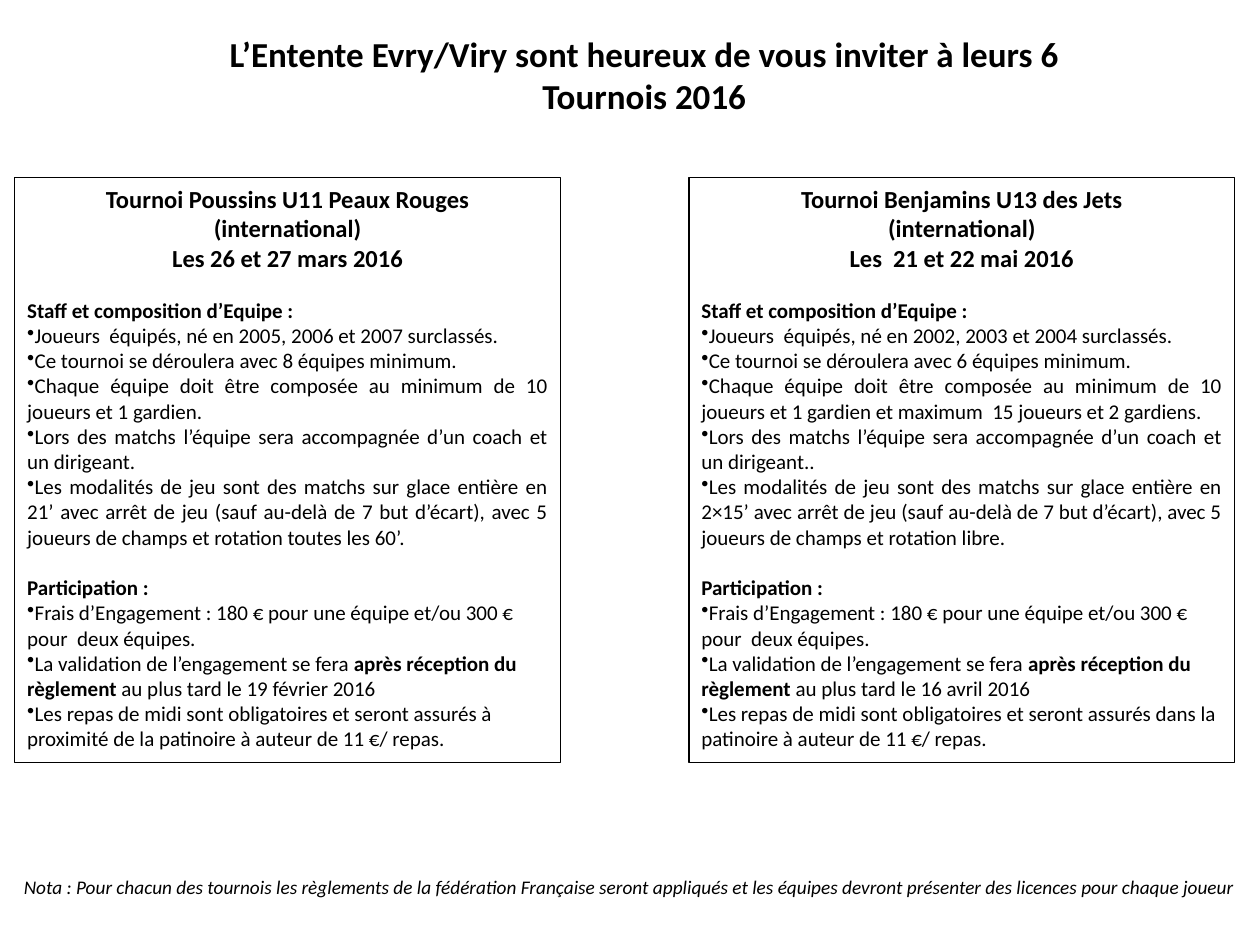
from lxml.etree import SubElement
from pptx import Presentation
from pptx.dml.color import RGBColor
from pptx.enum.shapes import MSO_SHAPE
from pptx.enum.text import MSO_ANCHOR, PP_ALIGN
from pptx.oxml.ns import qn
from pptx.util import Cm, Pt

BLACK = RGBColor(0, 0, 0)
LEFT, MID, FULL = PP_ALIGN.LEFT, PP_ALIGN.CENTER, PP_ALIGN.JUSTIFY


class Deck:
    """Style and current slide of the invitation."""

    font = "Calibri"
    head = 14
    body = 12
    gap = Pt(14.5)

    def __init__(self):
        self.show = Presentation()
        self.show.slide_width, self.show.slide_height = Cm(25.4), Cm(19.05)
        self.slide = self.show.slides.add_slide(self.show.slide_layouts[6])

    def style(self, run, size, bold=False, italic=False):
        font = run.font
        font.name, font.size = self.font, Pt(size)
        font.bold, font.italic = bold, italic
        font.color.rgb = BLACK

    def text(self, x, y, w, h, words, size, bold=False, italic=False):
        box = self.slide.shapes.add_textbox(Cm(x), Cm(y), Cm(w), Cm(h))
        frame = box.text_frame
        frame.word_wrap = True
        frame.text = words
        para = frame.paragraphs[0]
        para.alignment = MID
        self.style(para.runs[0], size, bold, italic)

    def title(self, para, words):
        para.text = words
        para.alignment = MID
        self.style(para.runs[0], self.head, bold=True)

    def label(self, para, words):
        para.text = words
        para.alignment = LEFT
        para.space_before = self.gap
        self.style(para.runs[0], self.body, bold=True)

    def bullet(self, para, words, align):
        para.alignment = align
        props = para._p.get_or_add_pPr()
        props.set("marL", "0")
        props.set("indent", "0")
        SubElement(props, qn("a:buChar"), char="•")
        for i, part in enumerate(words.split("|")):
            run = para.add_run()
            run.text = part
            self.style(run, self.body, bold=i % 2 == 1)

    def panel(self, x, heads, parts):
        box = self.slide.shapes.add_shape(
            MSO_SHAPE.RECTANGLE, Cm(x), Cm(3.58), Cm(11), Cm(11.79))
        box.shadow.inherit = False
        box.fill.background()
        box.line.color.rgb = BLACK
        box.line.width = Pt(0.75)
        frame = box.text_frame
        frame.word_wrap = True
        frame.vertical_anchor = MSO_ANCHOR.TOP
        self.title(frame.paragraphs[0], heads[0])
        for words in heads[1:]:
            self.title(frame.add_paragraph(), words)
        for name, align, items in parts:
            self.label(frame.add_paragraph(), name)
            for words in items:
                self.bullet(frame.add_paragraph(), words, align)

    def event(self, x, name, dates, born, teams, squad, stop, time, turn, due, place):
        staff = [
            f"Joueurs  équipés, né en {born} surclassés.",
            f"Ce tournoi se déroulera avec {teams} équipes minimum.",
            "Chaque équipe doit être composée au minimum de 10 joueurs "
            f"et 1 gardien{squad}.",
            "Lors des matchs l’équipe sera accompagnée d’un coach "
            f"et un dirigeant{stop}",
            f"Les modalités de jeu sont des matchs sur glace entière en {time} "
            "avec arrêt de jeu (sauf au-delà de 7 but d’écart), avec 5 joueurs "
            f"de champs et rotation {turn}.",
        ]
        terms = [
            "Frais d’Engagement : 180 € pour une équipe et/ou 300 € "
            "pour  deux équipes.",
            "La validation de l’engagement se fera |après réception du règlement|"
            f" au plus tard le {due} 2016",
            "Les repas de midi sont obligatoires et seront assurés "
            f"{place} patinoire à auteur de 11 €/ repas.",
        ]
        self.panel(
            x, [f"Tournoi {name}", "(international)", f"Les {dates} 2016"],
            [("Staff et composition d’Equipe :", FULL, staff),
             ("Participation :", LEFT, terms)])


def main():
    deck = Deck()
    deck.text(4.29, 0.53, 17.4, 1.96,
              "L’Entente Evry/Viry sont heureux de vous inviter "
              "à leurs 6 Tournois 2016", 20, bold=True)
    deck.event(0.3, name="Poussins U11 Peaux Rouges", dates="26 et 27 mars",
               born="2005, 2006 et 2007", teams=8, squad="", stop=".",
               time="21’", turn="toutes les 60’", due="19 février",
               place="à proximité de la")
    deck.event(13.89, name="Benjamins U13 des Jets", dates=" 21 et 22 mai",
               born="2002, 2003 et 2004", teams=6,
               squad=" et maximum  15 joueurs et 2 gardiens", stop="..",
               time="2×15’", turn="libre", due="16 avril", place="dans la")
    deck.text(0, 17.53, 25.4, 0.74,
              "Nota : Pour chacun des tournois les règlements de la fédération "
              "Française seront appliqués et les équipes devront présenter "
              "des licences pour chaque joueur", 11, italic=True)
    deck.show.save("out.pptx")


if __name__ == "__main__":
    main()
